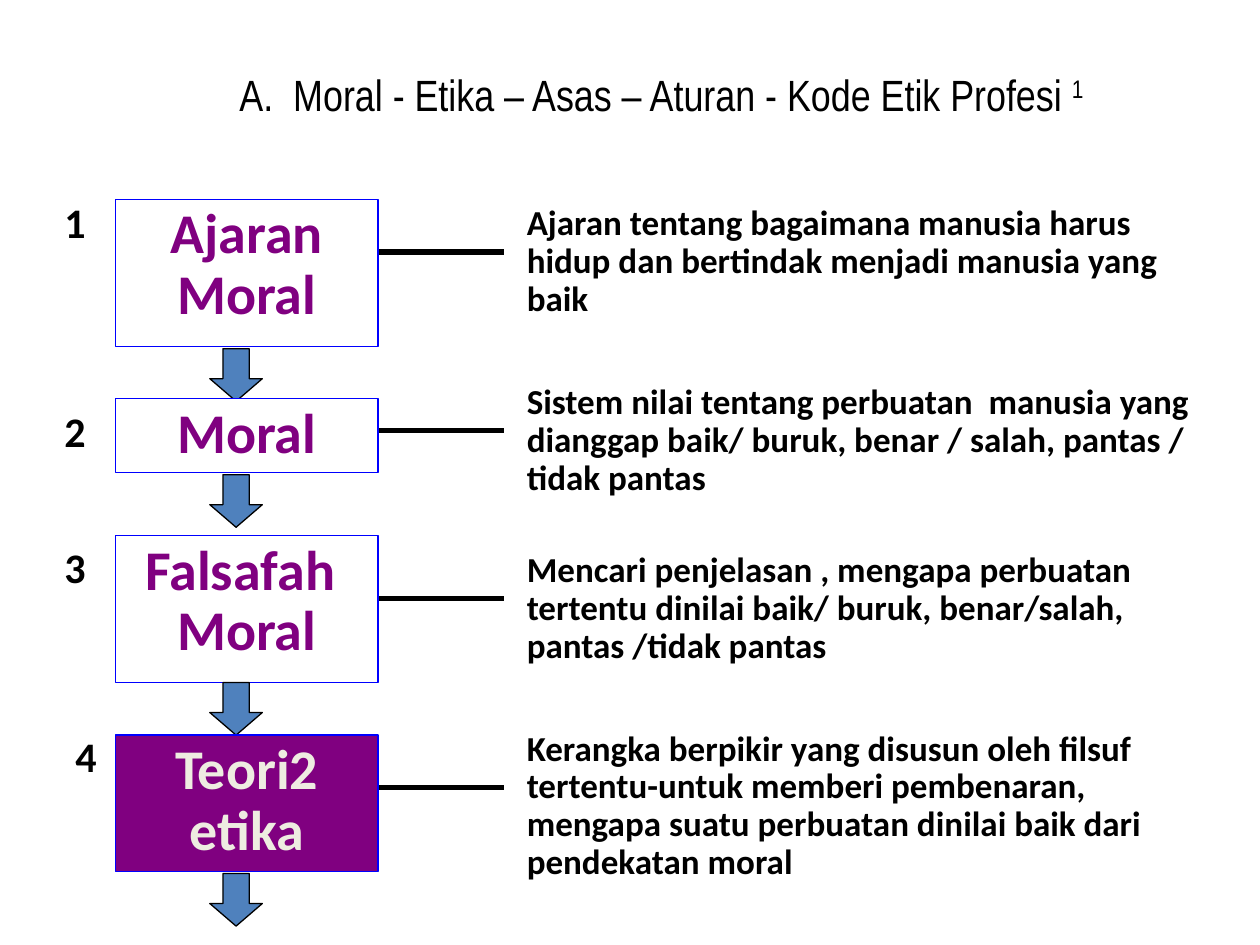
from collections import namedtuple

from lxml.etree import SubElement
from pptx import Presentation
from pptx.dml.color import RGBColor
from pptx.enum.shapes import MSO_CONNECTOR, MSO_SHAPE
from pptx.enum.text import MSO_ANCHOR, MSO_AUTO_SIZE, PP_ALIGN
from pptx.oxml.ns import qn
from pptx.util import Cm, Pt

COLORS = {
    "black": "000000",
    "white": "FFFFFF",
    "purple": "800080",
    "cream": "EEECE1",
    "border": "0000FF",
    "arrow": "4F81BD",
}

# Columns shared by every step, in cm
BOX_LEFT, BOX_WIDTH = 2.33, 5.29
LINE_START, LINE_END = 6.99, 10.16
NOTE_LEFT, NOTE_WIDTH = 10.37, 14.39
ARROW_LEFT, ARROW_SIZE = 4.23, 1.06

Step = namedtuple(
    "Step",
    "name note box_top box_height line_top note_top note_height "
    "arrow_top number_left number_top fill color",
)

STEPS = [
    Step("Ajaran Moral",
         "Ajaran tentang bagaimana manusia harus hidup dan bertindak "
         "menjadi manusia yang baik",
         4.02, 2.96, 5.08, 4.02, 2.96, 7.03, 1.05, 3.83, "white", "purple"),
    Step("Moral",
         "Sistem nilai tentang perbuatan  manusia yang dianggap baik/ buruk, "
         "benar / salah, pantas / tidak pantas",
         8.04, 1.48, 8.68, 7.62, 2.54, 9.57, 1.05, 8.04, "white", "purple"),
    Step("Falsafah  Moral",
         "Mencari penjelasan , mengapa perbuatan tertentu dinilai baik/ buruk, "
         "benar/salah, pantas /tidak pantas",
         10.8, 2.96, 12.07, 11.01, 2.54, 13.76, 1.05, 10.8, "white", "purple"),
    Step("Teori2 etika",
         "Kerangka berpikir yang disusun oleh filsuf tertentu-untuk memberi "
         "pembenaran, mengapa suatu perbuatan dinilai baik dari pendekatan moral",
         14.82, 2.75, 15.88, 14.61, 3.39, 17.61, 1.27, 14.61, "purple", "cream"),
]


class SlideBuilder:
    font_name = "Calibri"
    title_font = "Arial Narrow"

    def __init__(self, slide):
        self.slide = slide

    def color(self, name):
        return RGBColor.from_string(COLORS[name])

    def style(self, paragraph, size, color, name=font_name, bold=True):
        font = paragraph.font
        font.name, font.size, font.bold = name, Pt(size), bold
        font.color.rgb = self.color(color)

    def title(self, text, superscript, left, top, width, height):
        box = self.slide.shapes.add_textbox(Cm(left), Cm(top), Cm(width), Cm(height))
        frame = box.text_frame
        frame.word_wrap = True
        frame.vertical_anchor = MSO_ANCHOR.MIDDLE
        paragraph = frame.paragraphs[0]
        paragraph.alignment = PP_ALIGN.CENTER
        paragraph.add_run().text = text
        raised = paragraph.add_run()
        raised.text = superscript
        raised.font._element.set("baseline", "30000")
        self.style(paragraph, 25, "black", self.title_font, False)

    def line(self, top):
        connector = self.slide.shapes.add_connector(
            MSO_CONNECTOR.STRAIGHT, Cm(LINE_START), Cm(top), Cm(LINE_END), Cm(top))
        connector.line.color.rgb = self.color("black")
        connector.line.width = Pt(3)
        SubElement(connector._element.spPr, qn("a:effectLst"))

    def shape(self, kind, left, top, width, height, fill, border=None):
        shape = self.slide.shapes.add_shape(
            kind, Cm(left), Cm(top), Cm(width), Cm(height))
        shape.shadow.inherit = False
        shape.fill.solid()
        shape.fill.fore_color.rgb = self.color(fill)
        if border:
            shape.line.color.rgb = self.color(border)
            shape.line.width = Pt(0.75)
        else:
            shape.line.fill.background()
        return shape

    def text_block(self, text, bounds, size, color, alignment, fill, border=None):
        shape = self.shape(MSO_SHAPE.RECTANGLE, *bounds, fill, border)
        frame = shape.text_frame
        frame.word_wrap = True
        frame.vertical_anchor = MSO_ANCHOR.TOP
        paragraph = frame.paragraphs[0]
        paragraph.text = text
        paragraph.alignment = alignment
        paragraph.line_spacing = 0.9
        self.style(paragraph, size, color)

    def arrow(self, top):
        shape = self.shape(MSO_SHAPE.DOWN_ARROW, ARROW_LEFT, top,
                           ARROW_SIZE, ARROW_SIZE, "arrow", "black")
        shape.adjustments[1] = 0.43

    def number(self, text, left, top):
        box = self.slide.shapes.add_textbox(Cm(left), Cm(top), Cm(0.99), Cm(1.27))
        frame = box.text_frame
        frame.word_wrap = False
        frame.auto_size = MSO_AUTO_SIZE.SHAPE_TO_FIT_TEXT
        paragraph = frame.paragraphs[0]
        paragraph.text = text
        self.style(paragraph, 24, "black")


def main():
    presentation = Presentation()
    presentation.slide_width, presentation.slide_height = Cm(25.4), Cm(19.05)
    slide = presentation.slides.add_slide(presentation.slide_layouts[6])
    builder = SlideBuilder(slide)

    # Lines lie behind the boxes
    for step in STEPS:
        builder.line(step.line_top)

    builder.title("A.  Moral - Etika – Asas – Aturan - Kode Etik Profesi ", "1",
                  1.27, 0.43, 24.13, 2.92)

    # Each step: named box, explanation, arrow to the next, number
    for index, step in enumerate(STEPS, start=1):
        builder.text_block(
            step.name, (BOX_LEFT, step.box_top, BOX_WIDTH, step.box_height),
            32, step.color, PP_ALIGN.CENTER, step.fill, "border")
        builder.text_block(
            step.note, (NOTE_LEFT, step.note_top, NOTE_WIDTH, step.note_height),
            20, "black", PP_ALIGN.LEFT, "white")
        builder.arrow(step.arrow_top)
        builder.number(str(index), step.number_left, step.number_top)

    presentation.save("out.pptx")


if __name__ == "__main__":
    main()
